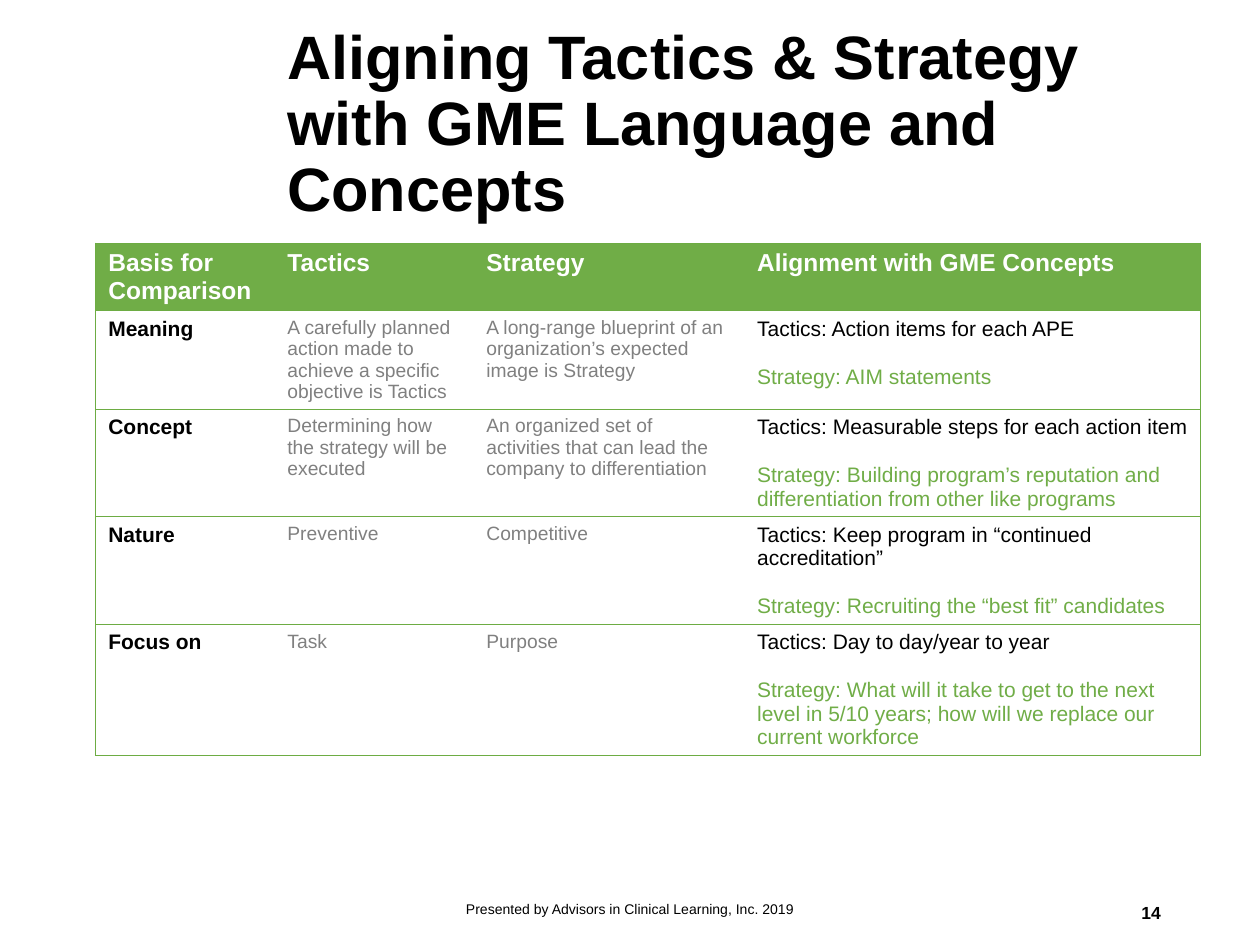
from dataclasses import dataclass

from lxml import etree
from pptx import Presentation
from pptx.dml.color import RGBColor
from pptx.enum.text import MSO_ANCHOR, MSO_AUTO_SIZE, PP_ALIGN
from pptx.oxml.ns import qn
from pptx.util import Cm, Pt

LEFT, CENTER, RIGHT = PP_ALIGN.LEFT, PP_ALIGN.CENTER, PP_ALIGN.RIGHT
MIDDLE = MSO_ANCHOR.MIDDLE
NO_AUTOFIT = MSO_AUTO_SIZE.NONE
TITLE_ONLY = 5


@dataclass(frozen=True)
class Theme:
    font: str = "Arial"
    black: str = "000000"
    white: str = "FFFFFF"
    gray: str = "808080"
    green: str = "70AD47"
    rule: str = "6DAC43"
    rule_width: float = 0.75
    title_size: int = 35
    header_size: int = 14
    label_size: int = 12
    detail_size: int = 11
    number_size: int = 10
    footer_size: int = 8
    strategy_gap: int = 14


HEADERS = ["Basis for Comparison", "Tactics", "Strategy", "Alignment with GME Concepts"]
COMPARISON = [
    ("Meaning",
     "A carefully planned action made to achieve a specific objective is Tactics",
     "A long-range blueprint of an organization’s expected image is Strategy",
     "Tactics: Action items for each APE",
     "Strategy: AIM statements"),
    ("Concept",
     "Determining how the strategy will be executed",
     "An organized set of activities that can lead the company to differentiation",
     "Tactics: Measurable steps for each action item",
     "Strategy: Building program’s reputation and differentiation from other like programs"),
    ("Nature", "Preventive", "Competitive",
     "Tactics: Keep program in “continued accreditation”",
     "Strategy: Recruiting the “best fit” candidates"),
    ("Focus on", "Task", "Purpose",
     "Tactics: Day to day/year to year",
     "Strategy: What will it take to get to the next level in 5/10 years; "
     "how will we replace our current workforce"),
]
COLUMN_WIDTHS = [3.61, 4.01, 5.46, 9.19]
ROW_HEIGHT = 1.04


class SlideBuilder:
    def __init__(self, slide, theme):
        self.slide = slide
        self.theme = theme

    def add_text(self, paragraph, text, size, color, bold=False, **layout):
        for name, value in layout.items():
            setattr(paragraph, name, value)
        run = paragraph.add_run()
        run.text = text
        style = {"name": self.theme.font, "size": Pt(size), "bold": bold}
        for name, value in style.items():
            setattr(run.font, name, value)
        run.font.color.rgb = RGBColor.from_string(color)

    def set_frame(self, frame):
        settings = {
            "word_wrap": True, "auto_size": NO_AUTOFIT, "vertical_anchor": MIDDLE,
            "margin_left": Cm(0.25), "margin_right": Cm(0.25),
            "margin_top": Cm(0.13), "margin_bottom": Cm(0.13),
        }
        for name, value in settings.items():
            setattr(frame, name, value)

    def title(self, text, left, top, width, height):
        heading = self.slide.shapes.title
        box = {"left": left, "top": top, "width": width, "height": height}
        for name, value in box.items():
            setattr(heading, name, Cm(value))
        self.set_frame(heading.text_frame)
        self.add_text(heading.text_frame.paragraphs[0], text, self.theme.title_size,
                      self.theme.black, bold=True, alignment=LEFT, line_spacing=0.9)

    def label(self, text, left, top, width, height, size, alignment, bold=False):
        box = self.slide.shapes.add_textbox(Cm(left), Cm(top), Cm(width), Cm(height))
        self.set_frame(box.text_frame)
        self.add_text(box.text_frame.paragraphs[0], text, size, self.theme.black,
                      bold, alignment=alignment)

    def cell_borders(self, cell, ruled_sides):
        """Rule the given sides (L, R, T, B) and hide the others."""
        properties = cell._tc.get_or_add_tcPr()
        for position, side in enumerate("LRTB"):
            line = etree.Element(qn(f"a:ln{side}"), w=str(Pt(self.theme.rule_width)))
            if side in ruled_sides:
                fill = etree.SubElement(line, qn("a:solidFill"))
                etree.SubElement(fill, qn("a:srgbClr"), val=self.theme.rule)
            else:
                etree.SubElement(line, qn("a:noFill"))
            properties.insert(position, line)

    def comparison_table(self, headers, rows, left, top):
        theme = self.theme
        row_count, column_count = len(rows) + 1, len(headers)
        table = self.slide.shapes.add_table(
            row_count, column_count, Cm(left), Cm(top),
            Cm(sum(COLUMN_WIDTHS)), Cm(ROW_HEIGHT * row_count)).table
        for column, width in zip(table.columns, COLUMN_WIDTHS):
            column.width = Cm(width)
        for row in table.rows:
            row.height = Cm(ROW_HEIGHT)

        for index, cell in enumerate(table.iter_cells()):
            row, column = divmod(index, column_count)
            cell.fill.solid()
            cell.fill.fore_color.rgb = RGBColor.from_string(
                theme.white if row else theme.green)
            sides = "TB" + "L" * (column == 0) + "R" * (column == column_count - 1)
            self.cell_borders(cell, sides)

        for column, header in enumerate(headers):
            self.add_text(table.cell(0, column).text_frame.paragraphs[0], header,
                          theme.header_size, theme.white, bold=True)
        for row, (basis, tactics, strategy, tactic_fit, strategy_fit) in enumerate(rows, 1):
            frames = [table.cell(row, column).text_frame for column in range(column_count)]
            first = [frame.paragraphs[0] for frame in frames]
            self.add_text(first[0], basis, theme.label_size, theme.black, bold=True)
            self.add_text(first[1], tactics, theme.detail_size, theme.gray)
            self.add_text(first[2], strategy, theme.detail_size, theme.gray)
            self.add_text(first[3], tactic_fit, theme.label_size, theme.black)
            self.add_text(frames[3].add_paragraph(), strategy_fit, theme.label_size,
                          theme.green, space_before=Pt(theme.strategy_gap))


def main():
    presentation = Presentation()
    presentation.slide_width, presentation.slide_height = Cm(25.4), Cm(19.05)
    slide = presentation.slides.add_slide(presentation.slide_layouts[TITLE_ONLY])
    theme = Theme()
    builder = SlideBuilder(slide, theme)
    builder.title("Aligning Tactics & Strategy with GME Language and Concepts",
                  5.54, 0.69, 18.14, 3.68)
    builder.label("14", 17.93, 17.88, 5.72, 1.02, theme.number_size, RIGHT, bold=True)
    builder.comparison_table(HEADERS, COMPARISON, 1.93, 4.9)
    builder.label("Presented by Advisors in Clinical Learning, Inc. 2019",
                  8.41, 17.81, 8.59, 1.02, theme.footer_size, CENTER)
    presentation.save("out.pptx")


if __name__ == "__main__":
    main()
